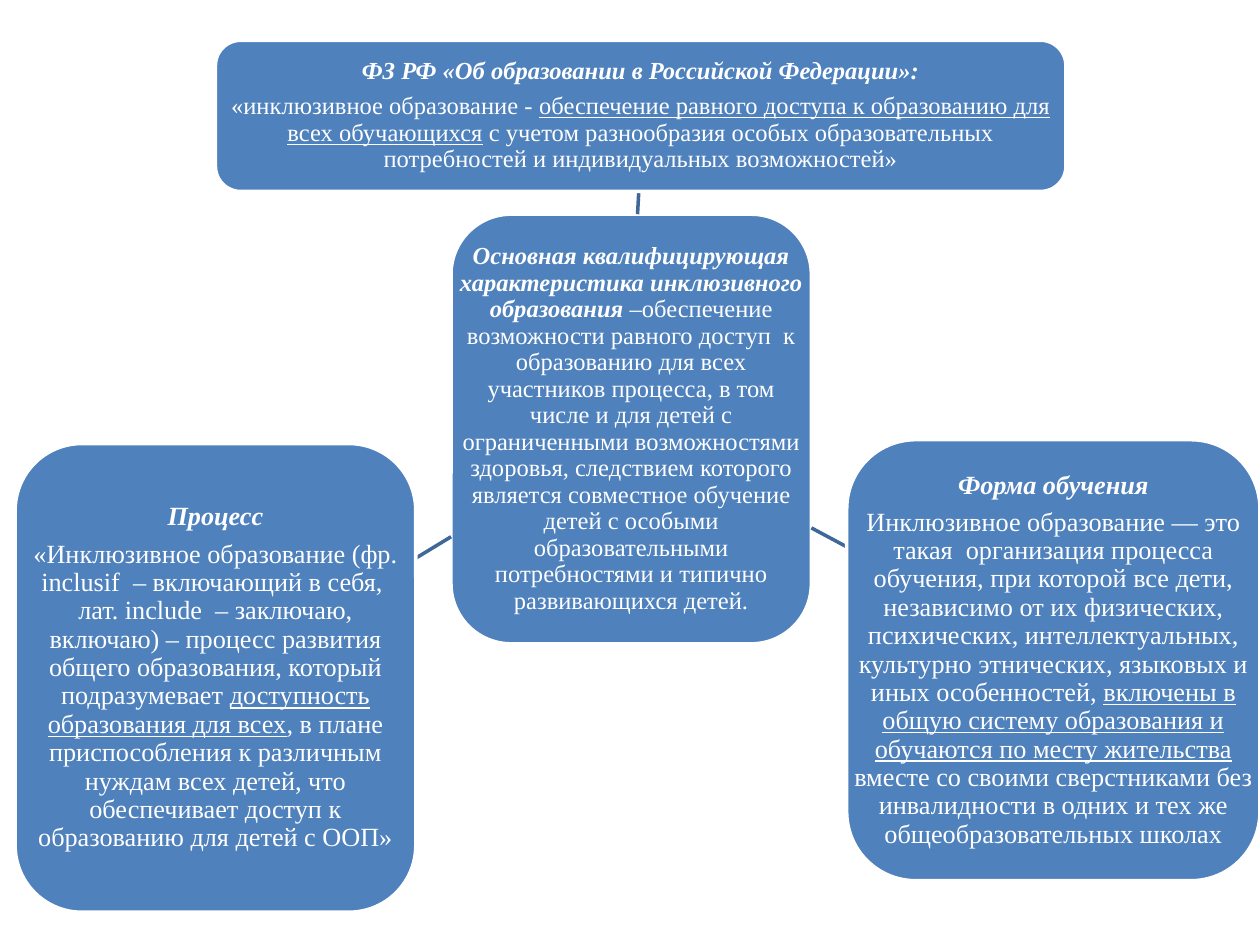
from dataclasses import dataclass

import pptx
import pptx.dml.color
import pptx.enum.shapes
import pptx.enum.text
import pptx.oxml.ns
import pptx.util
from lxml import etree

Inches = pptx.util.Inches
Pt = pptx.util.Pt
RGB = pptx.dml.color.RGBColor


@dataclass(frozen=True)
class Theme:
    card: RGB = RGB(0x4F, 0x81, 0xBD)
    link: RGB = RGB(0x3F, 0x67, 0x97)
    white: RGB = RGB(0xFF, 0xFF, 0xFF)
    font: str = "Times New Roman"
    size: int = 14
    side_size: int = 15
    line: int = 2
    leading: float = 0.9
    gap: int = 5
    inset: float = 0.04


THEME = Theme()

# Run styles
PLAIN, HEADING, UNDERLINED = "plain", "heading", "underlined"

LAW = [
    [("ФЗ РФ «Об образовании в Российской Федерации»:", HEADING)],
    [("«инклюзивное образование - ", PLAIN),
     ("обеспечение равного доступа к образованию для всех обучающихся", UNDERLINED),
     (" с учетом разнообразия особых образовательных потребностей и "
      "индивидуальных возможностей»", PLAIN)],
]
FEATURE = [
    [("Основная квалифицирующая характеристика инклюзивного образования ", HEADING),
     ("–обеспечение возможности равного доступ  к образованию для всех участников "
      "процесса, в том числе и для детей с ограниченными возможностями здоровья, "
      "следствием которого является совместное обучение детей с особыми "
      "образовательными потребностями и типично развивающихся детей.", PLAIN)],
]
STUDY_FORM = [
    [("Форма обучения", HEADING)],
    [("Инклюзивное образование — это такая  организация процесса обучения, при "
      "которой все дети, независимо от их физических, психических, "
      "интеллектуальных, культурно этнических, языковых и иных особенностей, ", PLAIN),
     ("включены в общую систему образования и обучаются по месту жительства ", UNDERLINED),
     ("вместе со своими сверстниками без инвалидности в одних и тех же "
      "общеобразовательных школах", PLAIN)],
]
PROCESS = [
    [("Процесс", HEADING)],
    [("«Инклюзивное образование (фр. inclusif  – включающий в себя,  лат. include  "
      "– заключаю, включаю) – процесс развития общего образования, который "
      "подразумевает ", PLAIN),
     ("доступность образования для всех", UNDERLINED),
     (", в плане приспособления к различным нуждам всех детей, что обеспечивает "
      "доступ к образованию для детей с ООП»", PLAIN)],
]


def add_card(slide, box, paragraphs, size):
    """Rounded card whose text uses the full box, beyond the corner insets."""
    area = [Inches(length) for length in box]
    card = slide.shapes.add_shape(
        pptx.enum.shapes.MSO_SHAPE.ROUNDED_RECTANGLE, *area)
    card.shadow.inherit = False
    card.fill.solid()
    card.fill.fore_color.rgb = THEME.card
    card.line.color.rgb = THEME.white
    card.line.width = Pt(THEME.line)

    frame = slide.shapes.add_textbox(*area).text_frame
    frame.word_wrap = True
    frame.vertical_anchor = pptx.enum.text.MSO_ANCHOR.MIDDLE
    frame.margin_left = frame.margin_right = Inches(THEME.inset)
    frame.margin_top = frame.margin_bottom = Inches(THEME.inset)
    for index, runs in enumerate(paragraphs):
        paragraph = frame.add_paragraph() if index else frame.paragraphs[0]
        paragraph.alignment = pptx.enum.text.PP_ALIGN.CENTER
        paragraph.line_spacing = THEME.leading
        paragraph.space_after = Pt(THEME.gap)
        for words, style in runs:
            run = paragraph.add_run()
            run.text = words
            run.font.name = THEME.font
            run.font.size = Pt(size)
            run.font.color.rgb = THEME.white
            run.font.bold = run.font.italic = style == HEADING
            run.font.underline = style == UNDERLINED


def add_link(slide, start, end):
    """Short line between the central card and a neighbour."""
    link = slide.shapes.add_connector(
        pptx.enum.shapes.MSO_CONNECTOR.STRAIGHT,
        *[Inches(length) for length in (*start, *end)])
    link.line.color.rgb = THEME.link
    link.line.width = Pt(THEME.line)
    etree.SubElement(link._element.spPr, pptx.oxml.ns.qn("a:effectLst"))


def add_diagram(slide, box):
    """Central card with three linked cards, placed relative to the box."""
    left, top, width, height = box

    def place(x, y, *extent):
        return (left + x, top + y, *extent)

    # Central characteristic
    add_card(slide, place(3.46, 1.38, 2.86, 3.41), FEATURE, THEME.size)

    # Law above, form of study to the right, process to the left
    law_width, form_width, process_height = 6.75, 3.28, 3.72
    neighbours = [
        ((4.94, 1.38), (4.95, 1.2),
         place(1.59, 0, law_width, 1.2), LAW, THEME.size),
        ((6.32, 3.87), (6.6, 4.02),
         place(width - form_width, 3.17, form_width, 3.5),
         STUDY_FORM, THEME.side_size),
        ((3.46, 3.94), (3.18, 4.11),
         place(0, height - process_height, 3.18, process_height),
         PROCESS, THEME.side_size),
    ]
    for start, end, area, paragraphs, size in neighbours:
        add_link(slide, place(*start), place(*end))
        add_card(slide, area, paragraphs, size)


def main():
    deck = pptx.Presentation()
    deck.slide_width = Inches(10)
    deck.slide_height = Inches(7.5)
    slide = deck.slides.add_slide(deck.slide_layouts[6])
    add_diagram(slide, (0.12, 0.32, 9.88, 6.92))
    deck.save("out.pptx")


if __name__ == "__main__":
    main()
